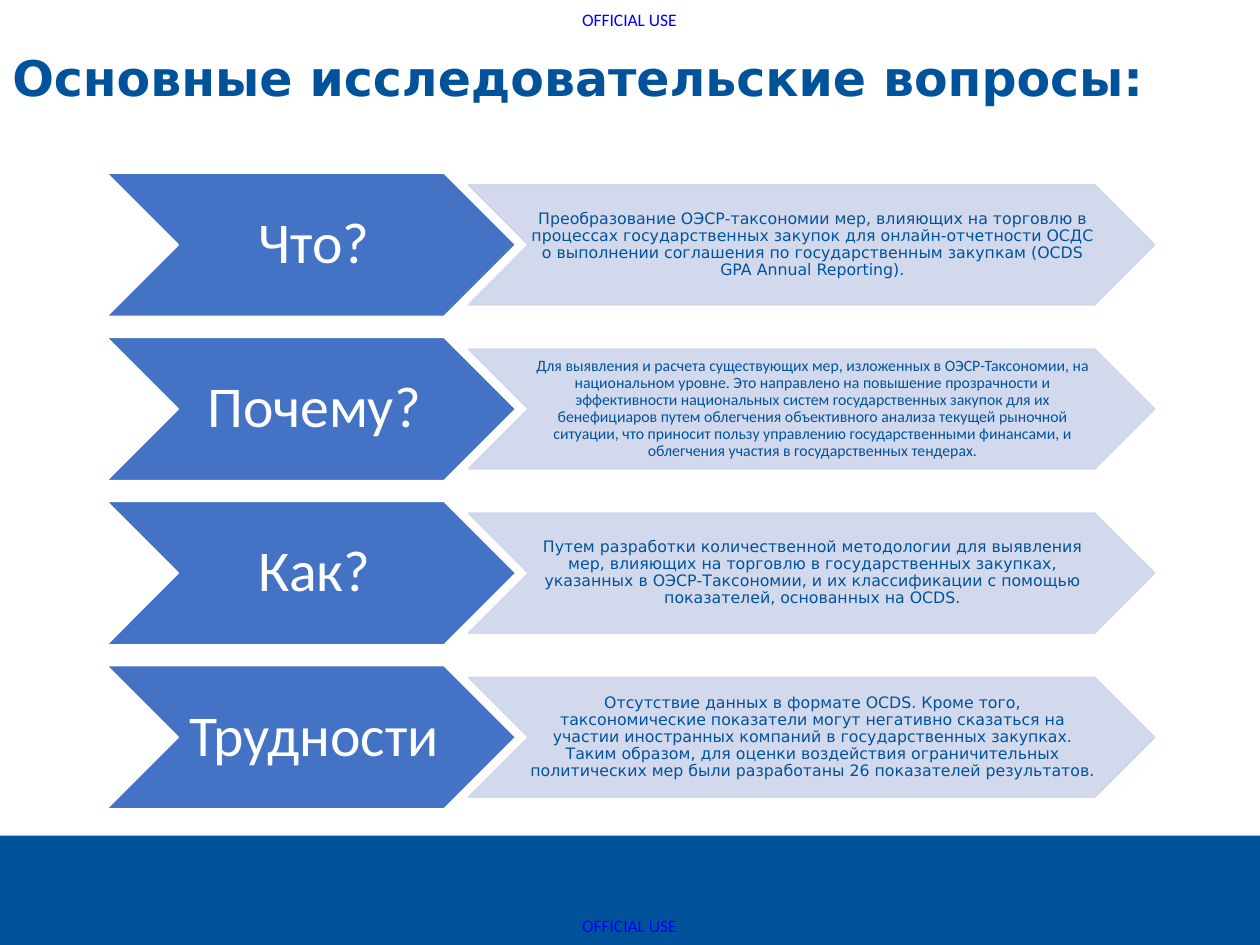
from lxml import etree
from pptx import Presentation
from pptx.dml.color import RGBColor
from pptx.enum.shapes import MSO_SHAPE
from pptx.enum.text import MSO_ANCHOR, PP_ALIGN
from pptx.oxml.ns import qn
from pptx.util import Pt

NAVY = RGBColor(0x00, 0x53, 0x9B)
BLUE = RGBColor(0x44, 0x72, 0xC4)
PALE = RGBColor(0xCF, 0xD5, 0xEA)
WHITE = RGBColor(0xFF, 0xFF, 0xFF)
MARKING_BLUE = RGBColor(0x00, 0x00, 0xFF)

SANS = "DejaVu Sans"
CALIBRI = "Calibri"

SLIDE_WIDTH, SLIDE_HEIGHT = 720, 540
ROW_PITCH = 93.8

QUESTIONS = [
    ("Что?", SANS,
     "Преобразование ОЭСР-таксономии мер, влияющих на торговлю в процессах "
     "государственных закупок для онлайн-отчетности ОСДС о выполнении соглашения "
     "по государственным закупкам (OCDS GPA Annual Reporting)."),
    ("Почему?", CALIBRI,
     "Для выявления и расчета существующих мер, изложенных в ОЭСР-Таксономии, на "
     "национальном уровне. Это направлено на повышение прозрачности и эффективности "
     "национальных систем государственных закупок для их бенефициаров путем "
     "облегчения объективного анализа текущей рыночной ситуации, что приносит пользу "
     "управлению государственными финансами, и облегчения участия в государственных "
     "тендерах."),
    ("Как?", SANS,
     "Путем разработки количественной методологии для выявления мер, влияющих на "
     "торговлю в государственных закупках, указанных в ОЭСР-Таксономии, и их "
     "классификации с помощью показателей, основанных на OCDS."),
    ("Трудности", SANS,
     "Отсутствие данных в формате OCDS. Кроме того, таксономические показатели могут "
     "негативно сказаться на участии иностранных компаний в государственных закупках. "
     "Таким образом, для оценки воздействия ограничительных политических мер были "
     "разработаны 26 показателей результатов."),
]


def set_text(frame, text, font_name, size, color, margins, bold=False,
             align=PP_ALIGN.LEFT, anchor=MSO_ANCHOR.TOP, spacing=None):
    """Fill a frame with one paragraph; margins are left, top, right, bottom."""
    frame.word_wrap = True
    frame.vertical_anchor = anchor
    (frame.margin_left, frame.margin_top,
     frame.margin_right, frame.margin_bottom) = map(Pt, margins)
    frame.text = text
    paragraph = frame.paragraphs[0]
    paragraph.alignment = align
    paragraph.line_spacing = spacing
    font = paragraph.runs[0].font
    font.name, font.size, font.bold = font_name, Pt(size), bold
    font.color.rgb = color


def set_opacity(color_format_parent, percent):
    for color in color_format_parent.iter(qn("a:srgbClr")):
        etree.SubElement(color, qn("a:alpha")).set("val", str(percent * 1000))


def add_chevron(slide, left, top, width, height, fill, line):
    chevron = slide.shapes.add_shape(
        MSO_SHAPE.CHEVRON, Pt(left), Pt(top), Pt(width), Pt(height))
    chevron.shadow.inherit = False
    chevron.fill.solid()
    chevron.fill.fore_color.rgb = fill
    chevron.line.color.rgb = line
    chevron.line.width = Pt(1)
    return chevron


def add_marking(slide, left, top):
    marking = slide.shapes.add_textbox(Pt(left), Pt(top), Pt(57), Pt(12.2))
    set_text(marking.text_frame, "OFFICIAL USE", CALIBRI, 10, MARKING_BLUE, (0, 0, 0, 0))


def add_footer_band(slide, top):
    band = slide.shapes.add_shape(
        MSO_SHAPE.RECTANGLE, 0, Pt(top), Pt(SLIDE_WIDTH), Pt(SLIDE_HEIGHT - top))
    band.shadow.inherit = False
    band.fill.solid()
    band.fill.fore_color.rgb = NAVY
    band.line.fill.background()


def add_title(slide, left, top, width, height):
    title = slide.shapes.add_textbox(Pt(left), Pt(top), Pt(width), Pt(height))
    set_text(title.text_frame, "Основные исследовательские вопросы:", SANS, 28, NAVY,
             (7.2, 3.6, 7.2, 3.6), bold=True, spacing=0.9)


def add_question_row(slide, left, top, height, question, answer_font, answer):
    """Dark question chevron followed by a lower, pale answer chevron."""
    centred = dict(align=PP_ALIGN.CENTER, anchor=MSO_ANCHOR.MIDDLE, spacing=0.9)

    question_arrow = add_chevron(slide, left, top, 234, height, BLUE, WHITE)
    set_text(question_arrow.text_frame, question, CALIBRI, 33, WHITE,
             (3.6, 1.4, 0, 1.4), **centred)

    answer_height = height * 5 / 6
    answer_arrow = add_chevron(slide, left + 207, top + (height - answer_height) / 2,
                               392, answer_height, PALE, PALE)
    set_opacity(answer_arrow.element.spPr, 90)
    set_text(answer_arrow.text_frame, answer, answer_font, 9, NAVY,
             (0.7, 0.7, 0, 0.7), **centred)


def main():
    presentation = Presentation()
    presentation.slide_width = Pt(SLIDE_WIDTH)
    presentation.slide_height = Pt(SLIDE_HEIGHT)
    slide = presentation.slides.add_slide(presentation.slide_layouts[6])

    add_footer_band(slide, 477.5)
    for top in (5, 522.7):
        add_marking(slide, 332.6, top)
    add_title(slide, 0, 27.4, 728.6, 105.8)
    for row, (question, answer_font, answer) in enumerate(QUESTIONS):
        add_question_row(slide, 60.8, 98.9 + row * ROW_PITCH, 82,
                         question, answer_font, answer)

    presentation.save("out.pptx")


if __name__ == "__main__":
    main()
